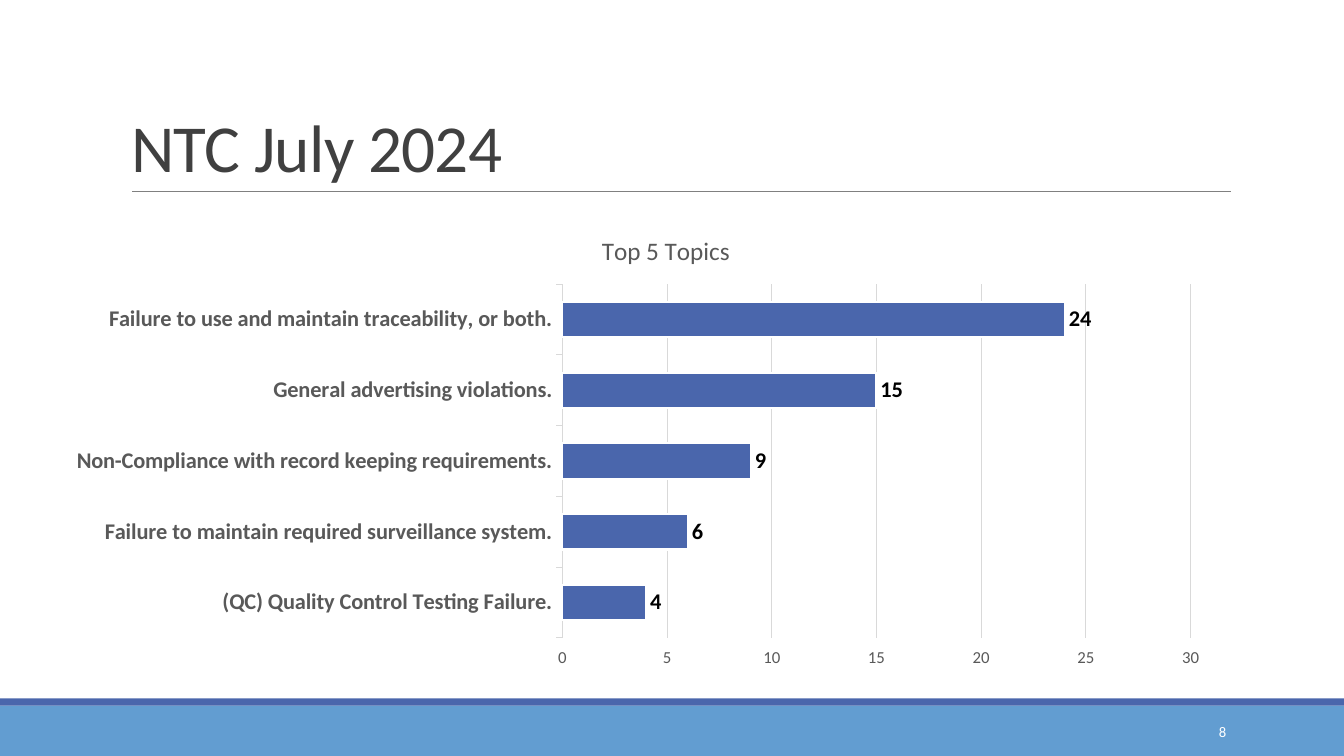
"""Build the NTC July 2024 slide with its bar chart of top topics."""
from lxml.etree import SubElement
from pptx import Presentation
from pptx.chart.data import CategoryChartData
from pptx.dml.color import RGBColor
from pptx.enum.chart import XL_CHART_TYPE, XL_LABEL_POSITION, XL_TICK_MARK
from pptx.enum.shapes import MSO_CONNECTOR, MSO_SHAPE
from pptx.enum.text import MSO_ANCHOR, MSO_AUTO_SIZE, PP_ALIGN
from pptx.oxml import parse_xml
from pptx.oxml.ns import nsdecls, qn
from pptx.util import Inches, Pt

SKY = RGBColor(0x62, 0x9D, 0xD1)
BLUE = RGBColor(0x4A, 0x66, 0xAC)
RULE = RGBColor(0x80, 0x80, 0x80)
DARK = RGBColor(0x40, 0x40, 0x40)
GRAY = RGBColor(0x59, 0x59, 0x59)
GRID = RGBColor(0xD9, 0xD9, 0xD9)
BLACK = RGBColor(0, 0, 0)
WHITE = RGBColor(0xFF, 0xFF, 0xFF)
FACE = "Calibri"
TOPICS = [
    ("(QC) Quality Control Testing Failure.", 4),
    ("Failure to maintain required surveillance system.", 6),
    ("Non-Compliance with record keeping requirements.", 9),
    ("General advertising violations.", 15),
    ("Failure to use and maintain traceability, or both.", 24),
]


def style(font, size, color, bold=False):
    font.name = FACE
    font.size = Pt(size)
    font.bold = bold
    font.color.rgb = color


def lay_out(part, index, **marks):
    for old in part.findall(qn("c:layout")):
        part.remove(old)
    layout = parse_xml(f"<c:layout {nsdecls('c')}/>")
    manual = SubElement(layout, qn("c:manualLayout"))
    for name, value in marks.items():
        SubElement(manual, qn(f"c:{name}")).set("val", str(value))
    part.insert(index, layout)


deck = Presentation()
deck.slide_width = Inches(13.33)
deck.slide_height = Inches(7.5)
slide = deck.slides.add_slide(deck.slide_layouts[5])
shapes = slide.shapes

for top, height, color in [(7, 0.5, SKY), (6.93, 0.07, BLUE)]:
    band = shapes.add_shape(
        MSO_SHAPE.RECTANGLE, 0, Inches(top), deck.slide_width, Inches(height))
    band.shadow.inherit = False
    band.fill.solid()
    band.fill.fore_color.rgb = color
    band.line.fill.background()

rule = shapes.add_connector(
    MSO_CONNECTOR.STRAIGHT, Inches(1.31), Inches(1.9), Inches(12.21), Inches(1.9))
rule.line.color.rgb = RULE
rule.line.width = Pt(0.5)
SubElement(rule._element.spPr, qn("a:effectLst"))

title = shapes.title
title.left, title.top = Inches(1.2), Inches(0.31)
title.width, title.height = Inches(11), Inches(1.59)
frame = title.text_frame
frame.text = "NTC July 2024"
frame.auto_size = MSO_AUTO_SIZE.NONE
frame.vertical_anchor = MSO_ANCHOR.BOTTOM
head = frame.paragraphs[0]
head.alignment = PP_ALIGN.LEFT
head.line_spacing = 0.85
style(head.font, 48, DARK)
head.runs[0]._r.get_or_add_rPr().set("spc", "-50")

data = CategoryChartData()
data.categories = [topic for topic, count in TOPICS]
data.add_series("Series 1", [count for topic, count in TOPICS])
chart = shapes.add_chart(
    XL_CHART_TYPE.BAR_CLUSTERED, Inches(0.5), Inches(2.08),
    Inches(11.54), Inches(4.62), data).chart
style(chart.font, 10, BLACK)
chart.has_legend = False
chart.has_title = True
name = chart.chart_title.text_frame
name.text = "Top 5 Topics"
style(name.paragraphs[0].font, 18, GRAY)
lay_out(chart.chart_title._element, 1, xMode="edge", yMode="edge", x=0.47, y=0.04)
lay_out(chart.element.xpath("//c:plotArea")[0], 0, layoutTarget="inner",
        xMode="edge", yMode="edge", x=0.44, y=0.16, w=0.54, h=0.76)

cats = chart.category_axis
style(cats.tick_labels.font, 16, GRAY, True)
cats.major_tick_mark = XL_TICK_MARK.OUTSIDE
cats.format.line.color.rgb = GRID
cats.format.line.width = Pt(0.75)

vals = chart.value_axis
style(vals.tick_labels.font, 12, GRAY)
vals.minimum_scale, vals.maximum_scale, vals.major_unit = 0, 30, 5
vals.major_tick_mark = XL_TICK_MARK.OUTSIDE
vals.format.line.fill.background()
vals.has_major_gridlines = True
vals.major_gridlines.format.line.color.rgb = GRID
vals.major_gridlines.format.line.width = Pt(0.75)

plot = chart.plots[0]
plot.gap_width = 100
plot.vary_by_categories = False
bars = plot.series[0]
bars.format.fill.solid()
bars.format.fill.fore_color.rgb = BLUE
bars.format.line.color.rgb = WHITE
bars.format.line.width = Pt(1.5)
labels = bars.data_labels
labels.show_value = True
labels.position = XL_LABEL_POSITION.OUTSIDE_END
style(labels.font, 16, BLACK, True)

box = shapes.add_textbox(Inches(10.83), Inches(7.06), Inches(1.43), Inches(0.4))
frame = box.text_frame
frame.word_wrap = True
frame.vertical_anchor = MSO_ANCHOR.MIDDLE
frame.text = "8"
page = frame.paragraphs[0]
page.alignment = PP_ALIGN.RIGHT
style(page.font, 10.5, WHITE)

deck.save("out.pptx")
